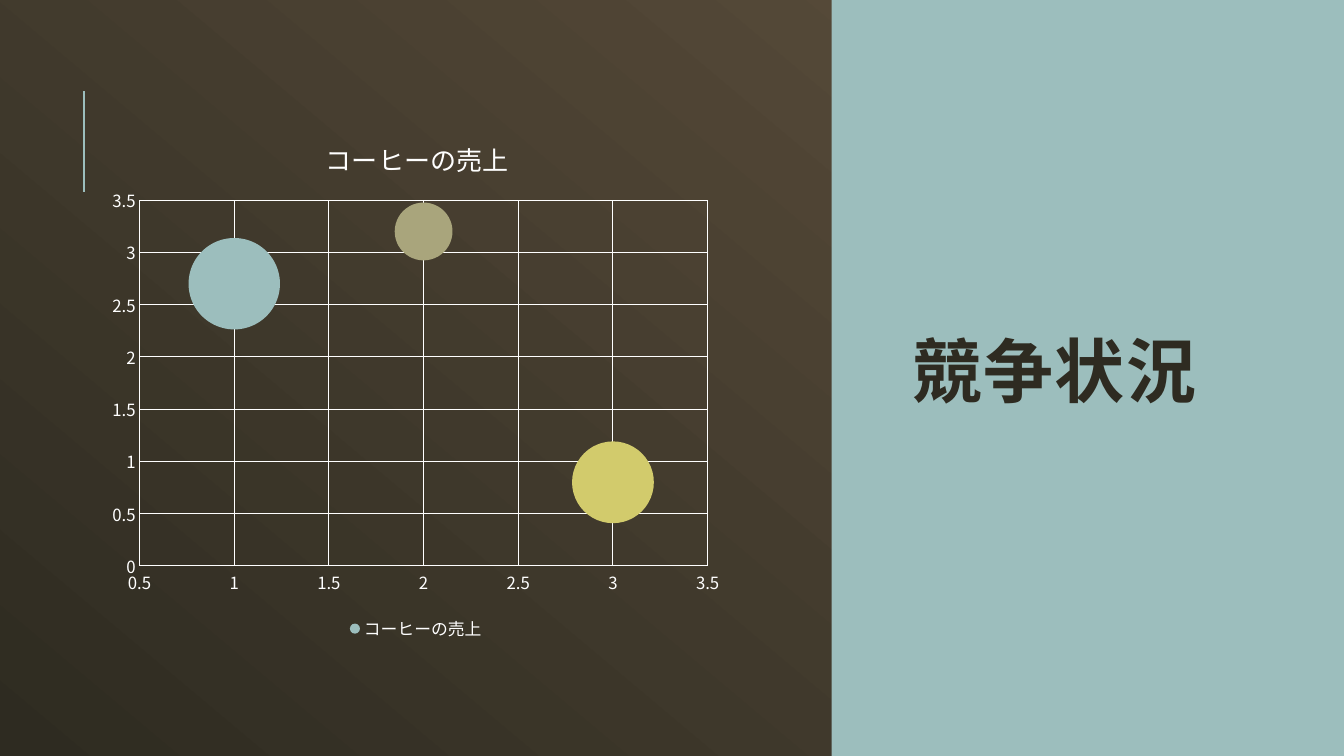
"""Build the competition slide with a bubble chart of coffee sales."""
from lxml import etree
from pptx import Presentation
from pptx.chart.data import BubbleChartData
from pptx.dml.color import RGBColor
from pptx.enum import chart as ch, shapes, text
from pptx.oxml import ns
from pptx.util import Pt

COLORS = {"light": "5F513E", "dark": "2E2B21", "teal": "9CBEBD",
          "khaki": "A9A57C", "yellow": "D2CB6C", "white": "FFFFFF"}
RGB = {name: RGBColor.from_string(value) for name, value in COLORS.items()}
FONT = "Noto Sans CJK JP"
SALES = "コーヒーの売上"


def style(font, size, color):
    """Give a font its face, size and colour."""
    font.name, font.size = FONT, Pt(size)
    font.color.rgb = RGB[color]


def place(element, index, **fractions):
    """Lay out a chart part by fractions of the chart area."""
    for old in element.findall(ns.qn("c:layout")):
        element.remove(old)
    layout = etree.Element(ns.qn("c:layout"))
    manual = etree.SubElement(layout, ns.qn("c:manualLayout"))
    for tag, value in fractions.items():
        etree.SubElement(manual, ns.qn(f"c:{tag}")).set("val", str(value))
    element.insert(index, layout)


prs = Presentation()
prs.slide_width, prs.slide_height = Pt(960), Pt(540)
s = prs.slides.add_slide(prs.slide_layouts[5])
fill = s.background.fill
fill.gradient()
fill.gradient_angle = 230
for stop, color, position in zip(fill.gradient_stops, ("light", "dark"), (0, 1)):
    stop.color.rgb = RGB[color]
    stop.position = position

rule = s.shapes.add_connector(shapes.MSO_CONNECTOR.STRAIGHT, Pt(60), Pt(137), Pt(60), Pt(65))
rule.line.color.rgb = RGB["teal"]
rule.line.width = Pt(1.5)
etree.SubElement(rule._element.spPr, ns.qn("a:effectLst"))

panel = s.shapes.add_shape(shapes.MSO_SHAPE.RECTANGLE, Pt(594), 0, Pt(366), Pt(540))
panel.shadow.inherit = False
panel.fill.solid()
panel.fill.fore_color.rgb = RGB["teal"]
panel.line.fill.background()

title = s.shapes.title
s.shapes._spTree.append(title._element)
title.left, title.top, title.width, title.height = Pt(644.4), Pt(50.5), Pt(269.3), Pt(438.5)
tf = title.text_frame
tf.text = "競争状況"
tf.word_wrap = True
tf.auto_size = text.MSO_AUTO_SIZE.NONE
tf.vertical_anchor = text.MSO_ANCHOR.MIDDLE
p = tf.paragraphs[0]
p.alignment = text.PP_ALIGN.LEFT
p.line_spacing = 0.8
r = p.runs[0]
style(r.font, 50, "dark")
r.font.bold = True
r._r.get_or_add_rPr().set("spc", "100")

data = BubbleChartData()
series_data = data.add_series(SALES)
for x, y, size in ((1, 2.7, 10), (2, 3.2, 4), (3, 0.8, 8)):
    series_data.add_data_point(x, y, size)
chart = s.shapes.add_chart(ch.XL_CHART_TYPE.BUBBLE, Pt(71.3), Pt(77), Pt(451.4), Pt(386), data).chart
chart.font.name, chart.font.size = "Calibri", Pt(10)
chart.font.color.rgb = RGB["white"]
plot = chart.plots[0]
plot.bubble_scale = 100
series = plot.series[0]
series.format.fill.solid()
series.format.fill.fore_color.rgb = RGB["teal"]
series.format.line.fill.background()
for index, color in ((1, "khaki"), (2, "yellow")):
    point = series.points[index].format
    point.fill.solid()
    point.fill.fore_color.rgb = RGB[color]
    point.line.fill.background()

for axis, low in ((chart.category_axis, 0.5), (chart.value_axis, 0)):
    axis.minimum_scale, axis.maximum_scale, axis.major_unit = low, 3.5, 0.5
    axis.major_tick_mark = axis.minor_tick_mark = ch.XL_TICK_MARK.NONE
    axis.has_major_gridlines = True
    axis.tick_labels.number_format = "General"
    axis.tick_labels.number_format_is_linked = False
    style(axis.tick_labels.font, 12, "white")
    for line in (axis.format.line, axis.major_gridlines.format.line):
        line.color.rgb = RGB["white"]
        line.width = Pt(0.75)

chart.has_title = True
heading = chart.chart_title.text_frame
heading.text = SALES
style(heading.paragraphs[0].runs[0].font, 18.6, "white")
heading.paragraphs[0].runs[0].font.bold = False
chart.has_legend = True
chart.legend.position = ch.XL_LEGEND_POSITION.BOTTOM
chart.legend.include_in_layout = False
style(chart.legend.font, 12, "white")

root = chart._chartSpace
place(root.find(".//" + ns.qn("c:plotArea")), 0, layoutTarget="inner", xMode="edge", yMode="edge",
      x=0.063, y=0.171, w=0.899, h=0.677)
place(root.find(".//" + ns.qn("c:title")), 1, xMode="edge", yMode="edge", x=0.35, y=0.045)
place(root.find(".//" + ns.qn("c:legend")), 1, xMode="edge", yMode="edge",
      x=0.385, y=0.942, w=0.23, h=0.055)

for tree in (title._element, root):
    for latin in list(tree.iter(ns.qn("a:latin"))):
        if latin.get("typeface") == FONT:
            east_asian = etree.Element(ns.qn("a:ea"))
            east_asian.set("typeface", FONT)
            latin.addnext(east_asian)

prs.save("out.pptx")
